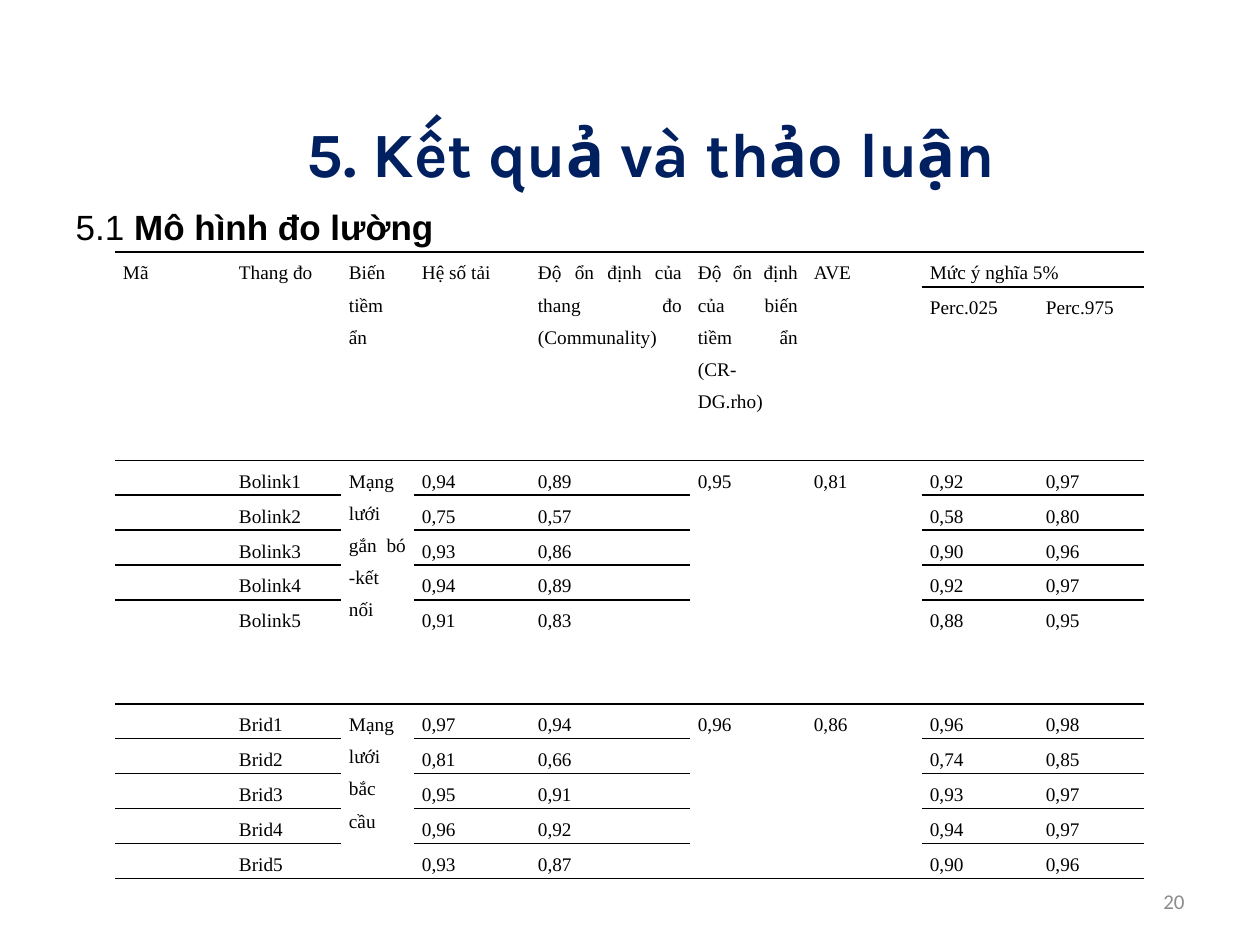
from lxml.etree import SubElement
from pptx import Presentation
from pptx.dml.color import RGBColor
from pptx.enum.text import MSO_ANCHOR, PP_ALIGN
from pptx.oxml.ns import qn
from pptx.util import Pt

PX = 914400 / 126
COLORS = {"title": "002060", "ink": "000000", "paper": "FFFFFF", "number": "8C8C8C"}
NO_GRID_STYLE = "{2D5ABB26-0587-4C30-8999-92F81FD0307C}"

COLUMN_WIDTHS = [116, 110, 73, 116, 160, 116, 116, 116, 106]
ROW_HEIGHTS = [35, 173, 34, 35, 34, 35, 104, 35, 34, 35, 35, 35]
HEADERS = ["Mã", "Thang đo", "Biến tiềm ẩn", "Hệ số tải",
           "Độ ổn định của thang đo (Communality)",
           "Độ ổn định của biến tiềm ẩn (CR- DG.rho)", "AVE", "Mức ý nghĩa 5%"]
PERCENTILES = ["Perc.025", "Perc.975"]
# Latent variable, its reliability and AVE, then one row per scale:
# code, loading, communality, lower and upper percentile.
GROUPS = [
    ("Mạng lưới gắn bó -kết nối", "0,95", "0,81", [
        ("Bolink1", "0,94", "0,89", "0,92", "0,97"),
        ("Bolink2", "0,75", "0,57", "0,58", "0,80"),
        ("Bolink3", "0,93", "0,86", "0,90", "0,96"),
        ("Bolink4", "0,94", "0,89", "0,92", "0,97"),
        ("Bolink5", "0,91", "0,83", "0,88", "0,95"),
    ]),
    ("Mạng lưới bắc cầu", "0,96", "0,86", [
        ("Brid1", "0,97", "0,94", "0,96", "0,98"),
        ("Brid2", "0,81", "0,66", "0,74", "0,85"),
        ("Brid3", "0,95", "0,91", "0,93", "0,97"),
        ("Brid4", "0,96", "0,92", "0,94", "0,97"),
        ("Brid5", "0,93", "0,87", "0,90", "0,96"),
    ]),
]
SCALE_COLUMNS = [1, 3, 4, 7, 8]
LATENT_COLUMNS = [2, 5, 6]


def px(length):
    return round(length * PX)


def place(shape, box):
    shape.left, shape.top, shape.width, shape.height = map(px, box)


def set_font(font, name, size, color, bold=None):
    font.name, font.size, font.bold = name, Pt(size), bold
    font.color.rgb = RGBColor.from_string(COLORS[color])


def add_title(slide, box):
    title = slide.shapes.title
    place(title, box)
    title.text_frame.text = "5. Kết quả và thảo luận"
    title.text_frame.vertical_anchor = MSO_ANCHOR.MIDDLE
    heading = title.text_frame.paragraphs[0]
    heading.alignment = PP_ALIGN.CENTER
    set_font(heading.font, "Karla", 36, "title", True)


def add_section(slide, box):
    body = slide.placeholders[1]
    place(body, box)
    section = body.text_frame.paragraphs[0]
    properties = section._p.get_or_add_pPr()
    properties.set("marL", str(px(48)))
    properties.set("indent", str(-px(48)))
    SubElement(properties, qn("a:buNone"))
    section.space_before = Pt(0)
    set_font(section.font, "Arial", 20, "ink")
    section.add_run().text = "5.1 "
    name = section.add_run()
    name.text = "Mô hình đo lường"
    name.font.bold = True


def rule_cell(cell):
    """Draw a line above and below the cell."""
    properties = cell._tc.get_or_add_tcPr()
    for side in ("a:lnT", "a:lnB"):
        line = SubElement(properties, qn(side), w=str(Pt(1)))
        fill = SubElement(line, qn("a:solidFill"))
        SubElement(fill, qn("a:srgbClr"), val=COLORS["ink"])


def format_cell(cell):
    if not cell.is_spanned:
        rule_cell(cell)
    cell.fill.solid()
    cell.fill.fore_color.rgb = RGBColor.from_string(COLORS["paper"])
    cell.margin_left = cell.margin_right = px(8)
    cell.margin_top = cell.margin_bottom = 0
    entry = cell.text_frame.paragraphs[0]
    entry.alignment = PP_ALIGN.JUSTIFY
    entry.line_spacing = 1.5
    set_font(entry.font, "Times New Roman", 11, "ink")


def fill_header(table):
    for column, header in enumerate(HEADERS):
        table.cell(0, column).text = header
        if column < 7:
            table.cell(0, column).merge(table.cell(1, column))
    table.cell(0, 7).merge(table.cell(0, 8))
    for column, percentile in enumerate(PERCENTILES, 7):
        table.cell(1, column).text = percentile


def fill_group(table, top, latent, scales):
    for column, value in zip(LATENT_COLUMNS, latent):
        table.cell(top, column).text = value
        table.cell(top, column).merge(table.cell(top + len(scales) - 1, column))
    for row, scale in enumerate(scales, top):
        for column, value in zip(SCALE_COLUMNS, scale):
            table.cell(row, column).text = value


def add_measurements(slide, left, top):
    box = (left, top, sum(COLUMN_WIDTHS), sum(ROW_HEIGHTS))
    frame = slide.shapes.add_table(len(ROW_HEIGHTS), len(COLUMN_WIDTHS), *map(px, box))
    table = frame.table
    table.first_row = table.horz_banding = False
    table._tbl.tblPr.find(qn("a:tableStyleId")).text = NO_GRID_STYLE
    for column, width in zip(table.columns, COLUMN_WIDTHS):
        column.width = px(width)
    for row, height in zip(table.rows, ROW_HEIGHTS):
        row.height = px(height)
    fill_header(table)
    group_top = 2
    for *latent, scales in GROUPS:
        fill_group(table, group_top, latent, scales)
        group_top += len(scales)
    for cell in table.iter_cells():
        format_cell(cell)


def add_page_number(slide, box):
    frame = slide.shapes.add_textbox(*map(px, box)).text_frame
    frame.word_wrap = True
    frame.vertical_anchor = MSO_ANCHOR.MIDDLE
    frame.text = "20"
    number = frame.paragraphs[0]
    number.alignment = PP_ALIGN.RIGHT
    set_font(number.font, "Calibri", 12, "number")


def main():
    deck = Presentation()
    deck.slide_width, deck.slide_height = px(1260), px(945)
    slide = deck.slides.add_slide(deck.slide_layouts[1])
    add_title(slide, (84, 105, 1134, 95))
    add_section(slide, (63, 199, 1134, 624))
    add_page_number(slide, (903, 876, 294, 50))
    add_measurements(slide, 115, 252)
    deck.save("out.pptx")


if __name__ == "__main__":
    main()
